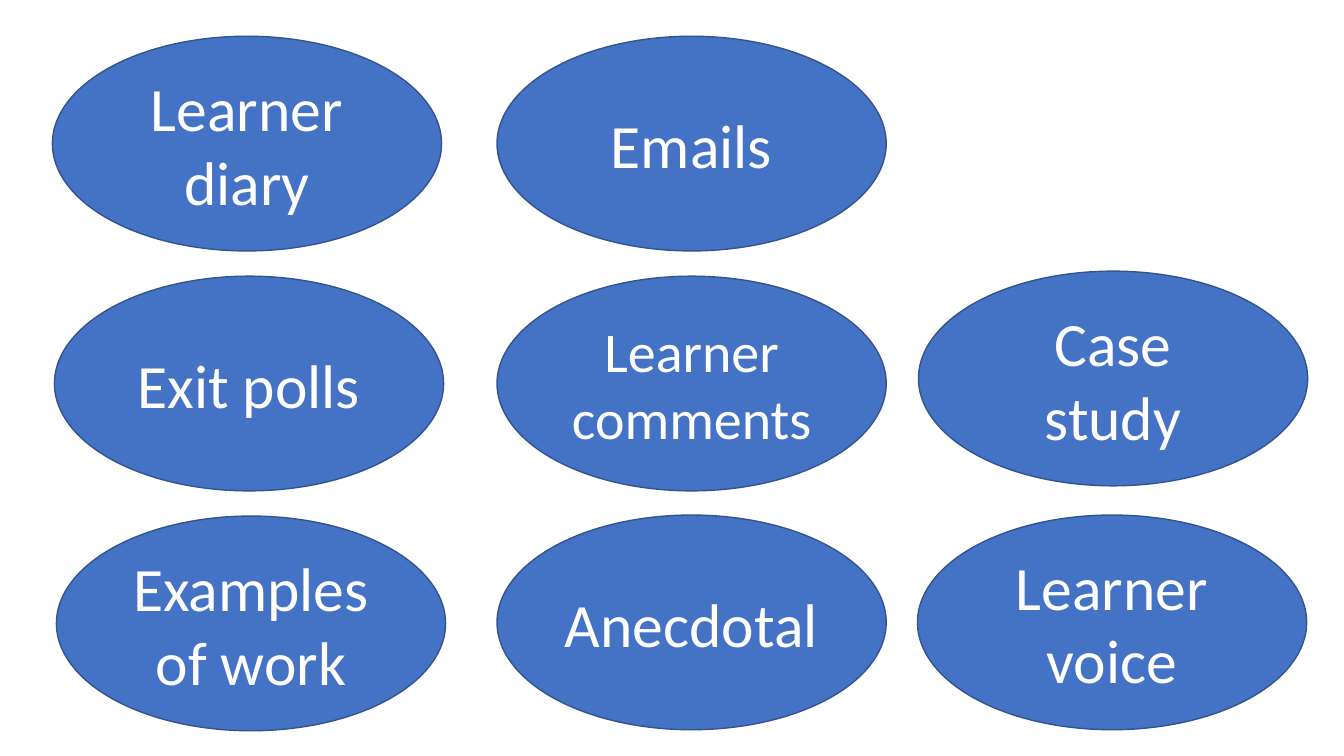
from pptx import Presentation
from pptx import util as u
from pptx.dml.color import RGBColor
from pptx.enum import shapes, text

BLUE = RGBColor(0x44, 0x72, 0xC4)
NAVY = RGBColor(0x32, 0x54, 0x91)
WHITE = RGBColor(0xFF, 0xFF, 0xFF)

COLUMN_LEFTS = (0.52, 4.93, 9.1)
TOP, ROW_STEP = 0.36, 2.38
OVAL_WIDTH, OVAL_HEIGHT = 3.86, 2.13


class EvidenceSlide:
    font_name = "Calibri"

    def __init__(self, deck):
        self.slide = deck.slides.add_slide(deck.slide_layouts[6])

    def oval(self, column, row, label, size=44, shift=(0, 0)):
        """Place a labelled ellipse in a grid cell, shifted by (x, y) inches."""
        left = COLUMN_LEFTS[column] + shift[0]
        top = TOP + row * ROW_STEP + shift[1]
        oval = self.slide.shapes.add_shape(
            shapes.MSO_SHAPE.OVAL, u.Inches(left), u.Inches(top),
            u.Inches(OVAL_WIDTH), u.Inches(OVAL_HEIGHT))
        oval.shadow.inherit = False
        oval.fill.solid()
        oval.fill.fore_color.rgb = BLUE
        oval.line.color.rgb = NAVY
        oval.line.width = u.Pt(1)

        frame = oval.text_frame
        frame.word_wrap = True
        frame.vertical_anchor = text.MSO_ANCHOR.MIDDLE
        paragraph = frame.paragraphs[0]
        paragraph.text = label
        paragraph.alignment = text.PP_ALIGN.CENTER
        paragraph.font.name = self.font_name
        paragraph.font.size = u.Pt(size)
        paragraph.font.color.rgb = WHITE


def main():
    deck = Presentation()
    deck.slide_width, deck.slide_height = u.Inches(13.33), u.Inches(7.5)
    evidence = EvidenceSlide(deck)

    # The first column steps slightly to the right on each row.
    for row, source in enumerate(("Learner diary", "Exit polls", "Examples of work")):
        evidence.oval(0, row, source, shift=(0.02 * row, 0))

    evidence.oval(1, 0, "Emails")
    evidence.oval(1, 1, "Learner comments", size=40)
    evidence.oval(1, 2, "Anecdotal", shift=(0, -0.01))

    evidence.oval(2, 1, "Case study", shift=(0.01, -0.05))
    evidence.oval(2, 2, "Learner voice", shift=(0, -0.01))

    deck.save("out.pptx")


if __name__ == "__main__":
    main()
